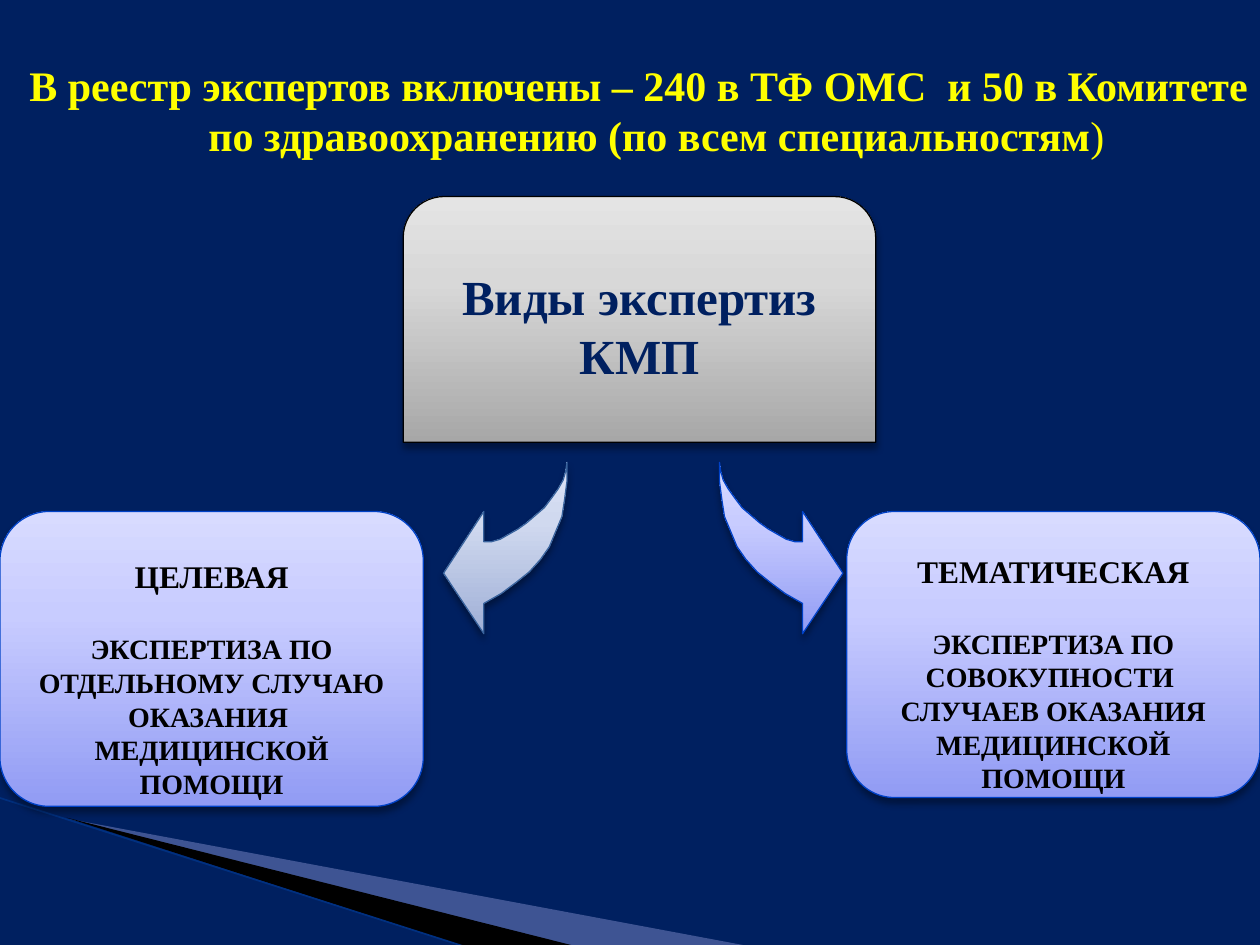
from dataclasses import dataclass

from lxml.etree import SubElement
from pptx import Presentation
from pptx.dml.color import RGBColor
from pptx.enum.shapes import MSO_CONNECTOR, MSO_SHAPE
from pptx.enum.text import MSO_ANCHOR as Anchor, PP_ALIGN as Align
from pptx.oxml import parse_xml
from pptx.oxml.ns import nsdecls, qn
from pptx.util import Inches, Pt

NAVY, BLACK, YELLOW, BLUE = "002060", "000000", "FFFF00", "0042C7"
GREY_FADE = ("A7A7A7", "D8D8D8", "E4E4E4")
LILAC_FADE = ("919BF4", "C8CCFF", "D8DBFF")
STEEL_FADE = ("9FAFD6", "D0D9EF", "DCE3F6")
MIRROR_SUM = 10.21
ARROW = [
    (4.5, 3.67), (4.5, 3.82), (4.48, 3.97), (4.46, 4.1), (4.41, 4.22),
    (4.36, 4.34), (4.29, 4.44), (4.2, 4.54), (4.1, 4.62), (3.98, 4.71),
    (3.84, 4.79), (3.84, 5.03), (3.52, 4.55), (3.84, 4.06), (3.84, 4.3),
    (3.9, 4.3), (3.97, 4.28), (4.04, 4.24), (4.11, 4.2), (4.18, 4.15),
    (4.25, 4.09), (4.32, 4.03), (4.38, 3.95), (4.43, 3.88), (4.47, 3.81),
    (4.49, 3.74),
]


@dataclass
class ExpertiseCard:
    """One kind of expertise with its heading and description."""
    left: float
    width: float
    height: float
    top_margin: float
    heading: str
    description: tuple[str, ...]


CARDS = [
    ExpertiseCard(0, 3.36, 2.34, 0.25, "ЦЕЛЕВАЯ",
                  ("ЭКСПЕРТИЗА ПО ОТДЕЛЬНОМУ СЛУЧАЮ", "ОКАЗАНИЯ  МЕДИЦИНСКОЙ ПОМОЩИ")),
    ExpertiseCard(6.72, 3.28, 2.27, 0.21, "ТЕМАТИЧЕСКАЯ",
                  ("ЭКСПЕРТИЗА ПО СОВОКУПНОСТИ  СЛУЧАЕВ ОКАЗАНИЯ МЕДИЦИНСКОЙ ПОМОЩИ",)),
]


def rgb(code: str) -> RGBColor:
    """Turn a hex string into a colour."""
    return RGBColor.from_string(code)


def add_text(paragraph, text: str, *, size: float, color: str, bold: bool = True,
             before: float = 0) -> None:
    """Append a centred, formatted run to a paragraph."""
    paragraph.alignment = Align.CENTER
    paragraph.space_before = Pt(before)
    run = paragraph.add_run()
    run.text = text
    font = run.font
    font.name, font.size, font.bold = "Times New Roman", Pt(size), bold
    font.color.rgb = rgb(color)


def style_glossy(shape, fade: tuple[str, ...], outline: str) -> None:
    """Give a shape an upward gradient, a thin outline and a soft shadow."""
    shape.line.color.rgb = rgb(outline)
    shape.line.width = Pt(0.75)
    shape.shadow.inherit = False
    stops = "".join(
        f'<a:gs pos="{position * 1000}"><a:srgbClr val="{code}"/></a:gs>'
        for position, code in zip((0, 65, 100), fade))
    gradient = parse_xml(
        f'<a:gradFill {nsdecls("a")} rotWithShape="1"><a:gsLst>{stops}</a:gsLst>'
        '<a:lin ang="16200000" scaled="0"/></a:gradFill>')
    properties = shape._element.spPr
    properties.find(qn("a:ln")).addprevious(gradient)
    properties.find(qn("a:effectLst")).append(parse_xml(
        f'<a:outerShdw {nsdecls("a")} blurRad="{Pt(4)}" dist="{Pt(3)}" dir="5400000" '
        'rotWithShape="0"><a:srgbClr val="000000"><a:alpha val="35000"/></a:srgbClr>'
        '</a:outerShdw>'))


def add_outline(slide, points: list[tuple[float, float]]):
    """Draw a closed polygon through points given in inches."""
    corners = [(Inches(x), Inches(y)) for x, y in points]
    builder = slide.shapes.build_freeform(*corners[0])
    builder.add_line_segments(corners[1:], close=True)
    return builder.convert_to_shape()


def add_wedge(slide, points: list[tuple[float, float]], color: str, opacity: int = 100) -> None:
    """Draw a flat decorative wedge."""
    wedge = add_outline(slide, points)
    wedge.shadow.inherit = False
    wedge.line.fill.background()
    wedge.fill.solid()
    wedge.fill.fore_color.rgb = rgb(color)
    if opacity < 100:
        tint = wedge._element.spPr.find(qn("a:solidFill"))[0]
        SubElement(tint, qn("a:alpha")).set("val", str(opacity * 1000))


def add_decor(slide) -> None:
    """Draw the wedges and the thin line in the lower left corner."""
    add_wedge(slide, [(0.55, 6.5), (5.95, 7.51), (4.56, 7.51)], "9DA4E1", 40)
    add_wedge(slide, [(0.53, 6.49), (4.57, 7.51), (3.72, 7.52)], BLACK)
    edge = slide.shapes.add_connector(
        MSO_CONNECTOR.STRAIGHT, Inches(-0.01), Inches(6.33), Inches(3.71), Inches(7.52))
    edge.line.color.rgb = rgb("003080")
    edge.line.width = Pt(0.95)
    SubElement(edge._element.spPr, qn("a:effectLst"))


def add_title(slide) -> None:
    """Write the yellow statement with its hanging indent."""
    frame = slide.shapes.add_textbox(0, Inches(0.39), Inches(10), Inches(1.25)).text_frame
    frame.word_wrap = True
    frame.margin_top, frame.margin_right = Inches(0.08), Inches(0.08)
    statement = frame.paragraphs[0]
    indents = statement._p.get_or_add_pPr()
    indents.set("marL", str(Inches(0.4)))
    indents.set("indent", str(Inches(-0.28)))
    add_text(statement, "В реестр экспертов включены – 240 в ТФ ОМС  и 50 в Комитете "
             "по здравоохранению (по всем специальностям", size=24, color=YELLOW)
    add_text(statement, ")", size=24, color=YELLOW, bold=False)


def add_root(slide) -> None:
    """Draw the central box naming the topic."""
    root = slide.shapes.add_shape(
        MSO_SHAPE.ROUND_2_SAME_RECTANGLE, Inches(3.2), Inches(1.56), Inches(3.75), Inches(1.95))
    style_glossy(root, GREY_FADE, BLACK)
    frame = root.text_frame
    frame.word_wrap = True
    frame.vertical_anchor = Anchor.MIDDLE
    add_text(frame.paragraphs[0], "Виды экспертиз", size=28, color=NAVY)
    add_text(frame.add_paragraph(), "КМП", size=28, color=NAVY)


def add_card(slide, card: ExpertiseCard) -> None:
    """Draw one rounded card with heading and description."""
    box = slide.shapes.add_shape(
        MSO_SHAPE.ROUNDED_RECTANGLE, Inches(card.left), Inches(4.06),
        Inches(card.width), Inches(card.height))
    style_glossy(box, LILAC_FADE, BLUE)
    frame = box.text_frame
    frame.word_wrap = True
    frame.vertical_anchor = Anchor.TOP
    frame.margin_top, frame.margin_bottom = Inches(card.top_margin), 0
    add_text(frame.paragraphs[0], card.heading, size=18, color=BLACK)
    for index, sentence in enumerate(card.description):
        add_text(frame.add_paragraph(), sentence, size=16, color=BLACK,
                 before=0 if index else 21)


def main() -> None:
    """Build the slide and save it."""
    deck = Presentation()
    deck.slide_width, deck.slide_height = Inches(10), Inches(7.5)
    slide = deck.slides.add_slide(deck.slide_layouts[6])
    slide.background.fill.solid()
    slide.background.fill.fore_color.rgb = rgb(NAVY)
    add_decor(slide)
    add_title(slide)
    add_root(slide)
    for card in CARDS:
        add_card(slide, card)
    style_glossy(add_outline(slide, ARROW), STEEL_FADE, "39639D")
    mirrored = [(MIRROR_SUM - x, y) for x, y in ARROW]
    style_glossy(add_outline(slide, mirrored), LILAC_FADE, BLUE)
    deck.save("out.pptx")


if __name__ == "__main__":
    main()
